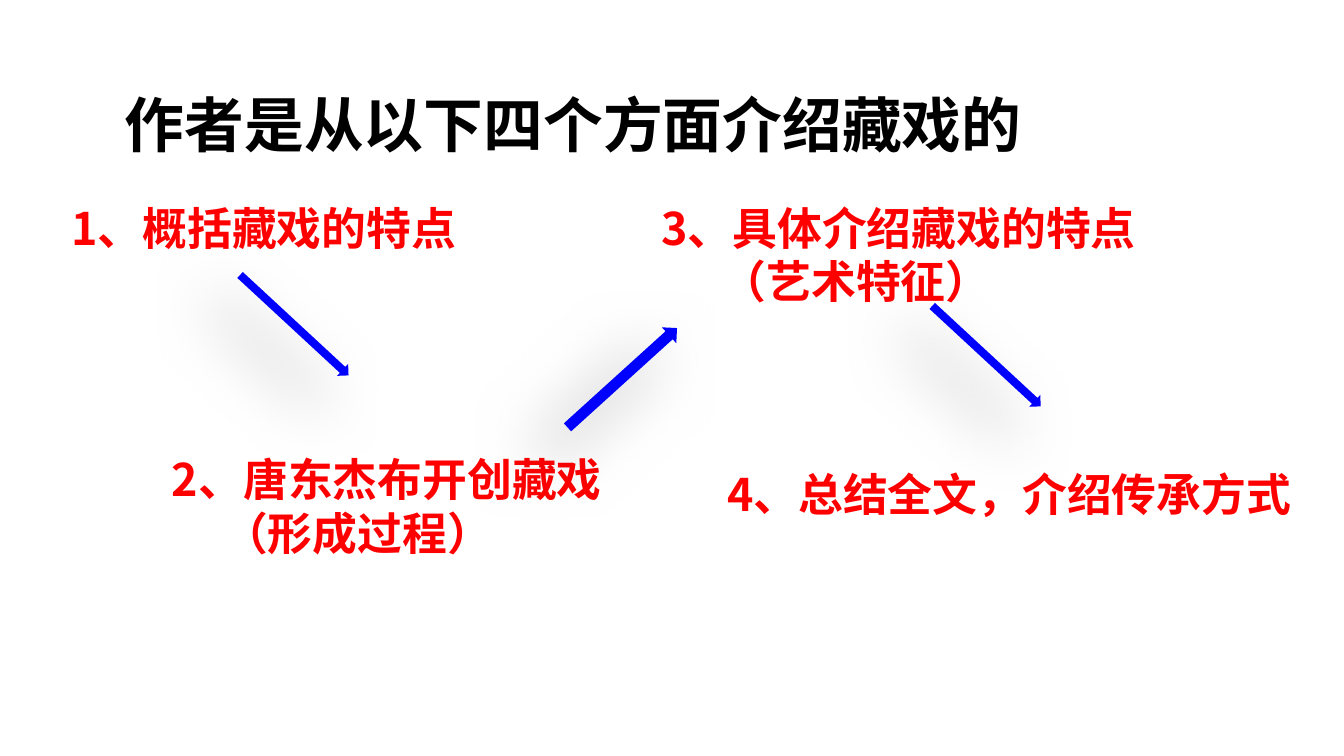
"""Build a slide on the four aspects from which the author presents Tibetan opera."""
import pptx
import pptx.dml.color
import pptx.enum.shapes
import pptx.enum.text
import pptx.oxml.ns
import pptx.util
from lxml import etree
from pptx.util import Inches

COLORS = {"title": "000000", "aspect": "FF0000", "arrow": "0000FF", "shadow": "000000"}
FONT = "Noto Sans CJK SC"
qn = pptx.oxml.ns.qn


def place(box, left, top, width, height):
    """Set the position and size of a shape in inches."""
    box.left, box.top = Inches(left), Inches(top)
    box.width, box.height = Inches(width), Inches(height)


def write_lines(box, lines, size, color):
    """Fill a box with (text, indent) lines in bold type."""
    frame = box.text_frame
    frame.text = "\n".join(text for text, _ in lines)
    frame.word_wrap = True
    frame.auto_size = pptx.enum.text.MSO_AUTO_SIZE.SHAPE_TO_FIT_TEXT
    frame.vertical_anchor = pptx.enum.text.MSO_ANCHOR.TOP
    frame.margin_left = frame.margin_right = Inches(0.08)
    frame.margin_top = frame.margin_bottom = Inches(0.04)
    for paragraph, (_, indent) in zip(frame.paragraphs, lines):
        paragraph.alignment = pptx.enum.text.PP_ALIGN.LEFT
        paragraph._p.get_or_add_pPr().set("marL", str(Inches(indent)))
        for run in paragraph.runs:
            run.font.name = FONT
            run.font.size = pptx.util.Pt(size)
            run.font.bold = True
            run.font.color.rgb = pptx.dml.color.RGBColor.from_string(COLORS[color])
            etree.SubElement(run.font._element, qn("a:ea"), typeface=FONT)


def add_title(slide, text):
    """Place and format the slide title."""
    place(slide.shapes.title, 0.45, 0.61, 8.5, 0.61)
    write_lines(slide.shapes.title, [(text, 0.4)], 32, "title")


def add_aspect(slide, left, top, width, height, lines):
    """Add one numbered aspect."""
    box = slide.shapes.add_textbox(0, 0, 0, 0)
    place(box, left, top, width, height)
    write_lines(box, lines, 24, "aspect")


def add_shadow(shape):
    """Give a shape a soft shadow to its lower left."""
    shape.shadow.inherit = False
    effects = shape._element.spPr.find(qn("a:effectLst"))
    shadow = etree.SubElement(
        effects, qn("a:outerShdw"), blurRad=str(pptx.util.Pt(35)),
        dist=str(pptx.util.Pt(20)), dir=str(135 * 60000), algn="ctr", rotWithShape="0")
    color = etree.SubElement(shadow, qn("a:srgbClr"), val=COLORS["shadow"])
    etree.SubElement(color, qn("a:alpha"), val="50000")


def add_arrow(slide, left, top, width, rotation):
    """Add a rotated arrow leading to the next aspect."""
    arrow = slide.shapes.add_shape(
        pptx.enum.shapes.MSO_SHAPE.DOWN_ARROW,
        Inches(left), Inches(top), Inches(width), Inches(1.1))
    arrow.rotation = rotation
    arrow.fill.solid()
    arrow.fill.fore_color.rgb = pptx.dml.color.RGBColor.from_string(COLORS["arrow"])
    arrow.line.fill.background()
    add_shadow(arrow)


def main():
    """Build and save the slide."""
    deck = pptx.Presentation()
    deck.slide_width = Inches(10)
    deck.slide_height = Inches(10 * 9 / 16)
    slide = deck.slides.add_slide(deck.slide_layouts[5])
    add_title(slide, "作者是从以下四个方面介绍藏戏的")
    add_aspect(slide, 0.45, 1.45, 3.16, 0.48, [("1、概括藏戏的特点", 0)])
    add_arrow(slide, 2.13, 1.87, 0.12, 312.8)
    add_aspect(slide, 1.2, 3.32, 3.4, 0.88,
               [("2、唐东杰布开创藏戏", 0), ("（形成过程）", 0.38)])
    add_arrow(slide, 4.55, 2.26, 0.16, 227.8)
    add_aspect(slide, 4.84, 1.45, 3.94, 0.88,
               [("3、具体介绍藏戏的特点", 0), ("（艺术特征）", 0.45)])
    add_arrow(slide, 7.28, 2.1, 0.12, 312.8)
    add_aspect(slide, 5.33, 3.43, 4.46, 0.48, [("4、总结全文，介绍传承方式", 0)])
    deck.save("out.pptx")


if __name__ == "__main__":
    main()
